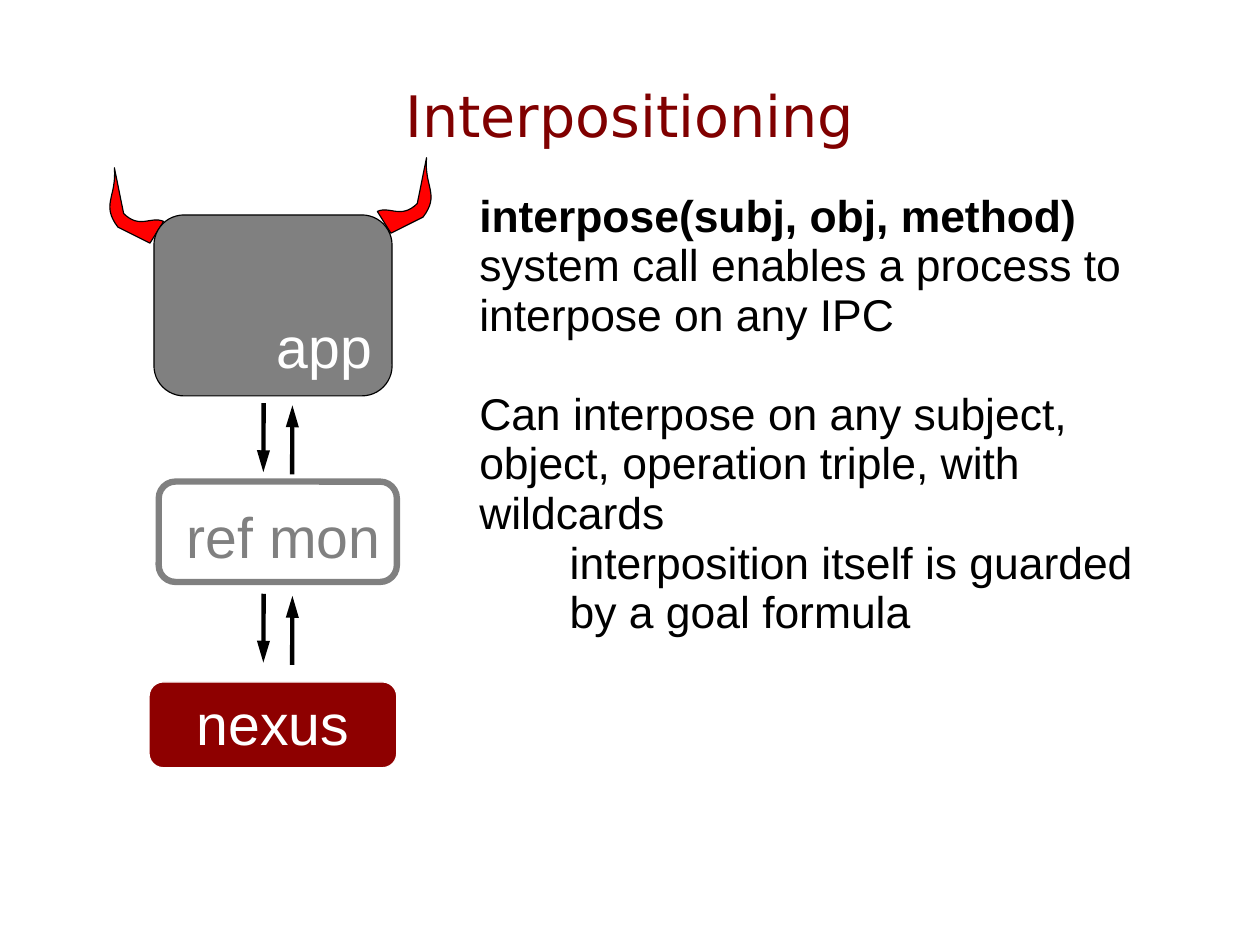
from lxml.etree import SubElement
from pptx import Presentation
from pptx.dml.color import RGBColor
from pptx.enum.shapes import MSO_CONNECTOR as Connector, MSO_SHAPE as Shape
from pptx.enum.text import MSO_ANCHOR as Anchor, PP_ALIGN as Align
from pptx.oxml.ns import qn
from pptx.util import Pt

BLACK, WHITE, GRAY = "000000", "FFFFFF", "808080"
HORN_START = (8.6, 47.5)
HORN_OUTER = [(28.8, 37.4), (39.6, 23), (29.5, 18.7), (31, 0)]
HORN_INNER = [(25.2, 28.8), (15.1, 38.9), (7.9, 30.2), (0, 33.8)]
HORN_WIDTH = 38.9


def color(value):
    return RGBColor.from_string(value)


def paint(shape, fill, line, weight):
    shape.shadow.inherit = False
    shape.fill.solid()
    shape.fill.fore_color.rgb = color(fill)
    shape.line.color.rgb = color(line)
    shape.line.width = Pt(weight)


def style(para, size, ink, font="Arial", align=Align.LEFT, spacing=0.93):
    para.alignment = align
    para.line_spacing = spacing
    for span in para.runs:
        span.font.size = Pt(size)
        span.font.name = font
        span.font.color.rgb = color(ink)


def add_text_box(page, left, top, width, height):
    box = page.shapes.add_textbox(Pt(left), Pt(top), Pt(width), Pt(height))
    box.text_frame.word_wrap = True
    return box.text_frame


def add_title(page, left, top, width, height):
    frame = add_text_box(page, left, top, width, height)
    frame.vertical_anchor = Anchor.MIDDLE
    frame.margin_left = frame.margin_right = frame.margin_bottom = 0
    frame.margin_top = Pt(0.7)
    frame.text = "Interpositioning"
    style(frame.paragraphs[0], 36, "800000", "DejaVu Sans", Align.CENTER, 0.98)


def add_body(page, left, top, width, height):
    frame = add_text_box(page, left, top, width, height)
    call = frame.paragraphs[0]
    call.add_run().text = "interpose(subj, obj, method) "
    call.add_run().text = "system call enables a process to interpose on any IPC"
    call.runs[0].font.bold = True
    triple = frame.add_paragraph()
    triple.text = "Can interpose on any subject, object, operation triple, with wildcards"
    triple.space_before = Pt(31)
    for line in ("interposition itself is guarded", "by a goal formula"):
        para = frame.add_paragraph()
        para.text = line
        para._p.get_or_add_pPr().set("marL", str(Pt(57)))
    for para in frame.paragraphs:
        style(para, 28, BLACK)


def bezier(a, b, c, d, t):
    u = 1 - t
    return tuple(u**3 * p + 3 * u * u * t * q + 3 * u * t * t * r + t**3 * s
                 for p, q, r, s in zip(a, b, c, d))


def add_horn(page, left, top, mirrored=False):
    def place(point):
        x = HORN_WIDTH - point[0] if mirrored else point[0]
        return Pt(left + x), Pt(top + point[1])

    outline = [bezier(*curve, step / 16)
               for curve in (HORN_OUTER, HORN_INNER) for step in range(17)]
    builder = page.shapes.build_freeform(*place(HORN_START))
    builder.add_line_segments([place(point) for point in outline], close=True)
    paint(builder.convert_to_shape(), "FF0000", BLACK, 0.75)


def add_layer(page, left, top, width, height, label, fill, line, weight, ink, align):
    box = page.shapes.add_shape(Shape.ROUNDED_RECTANGLE, Pt(left), Pt(top),
                                Pt(width), Pt(height))
    paint(box, fill, line, weight)
    frame = box.text_frame
    frame.text = label
    frame.vertical_anchor = Anchor.BOTTOM
    style(frame.paragraphs[0], 36, ink, align=align)


def add_arrow(page, x1, y1, x2, y2):
    arrow = page.shapes.add_connector(Connector.STRAIGHT, Pt(x1), Pt(y1), Pt(x2), Pt(y2))
    arrow.line.color.rgb = color(BLACK)
    arrow.line.width = Pt(2.75)
    line = arrow.line._get_or_add_ln()
    line.set("cap", "sq")
    SubElement(line, qn("a:tailEnd"), type="triangle", w="med", len="lg")
    SubElement(arrow._element.spPr, qn("a:effectLst"))


def add_exchange(page, left, top, width, height):
    add_arrow(page, left + 0.2, top, left, top + height)
    add_arrow(page, left + width - 0.2, top + height, left + width, top)


def add_stack(page, left, top):
    add_horn(page, left + 173.5, top)
    add_horn(page, left, top + 6.3, mirrored=True)
    add_layer(page, left + 32.8, top + 36, 150, 114, "app", GRAY, BLACK, 0.75,
              WHITE, Align.RIGHT)
    add_layer(page, left + 29.7, top + 330.2, 156, 54, "nexus", "8E0000", WHITE, 0.75,
              WHITE, Align.CENTER)
    add_layer(page, left + 35.8, top + 204, 150, 63.2, "ref mon", WHITE, GRAY, 4,
              GRAY, Align.RIGHT)
    for offset in (156, 276):
        add_exchange(page, left + 101.7, top + offset, 18.3, 42)


def main():
    deck = Presentation()
    deck.slide_width, deck.slide_height = Pt(793.7), Pt(595.28)
    page = deck.slides.add_slide(deck.slide_layouts[6])
    add_title(page, 39.6, 23.8, 714.2, 99.4)
    add_body(page, 294.8, 117.6, 462.2, 322.6)
    add_stack(page, 64.2, 99.4)
    deck.save("out.pptx")


if __name__ == "__main__":
    main()
